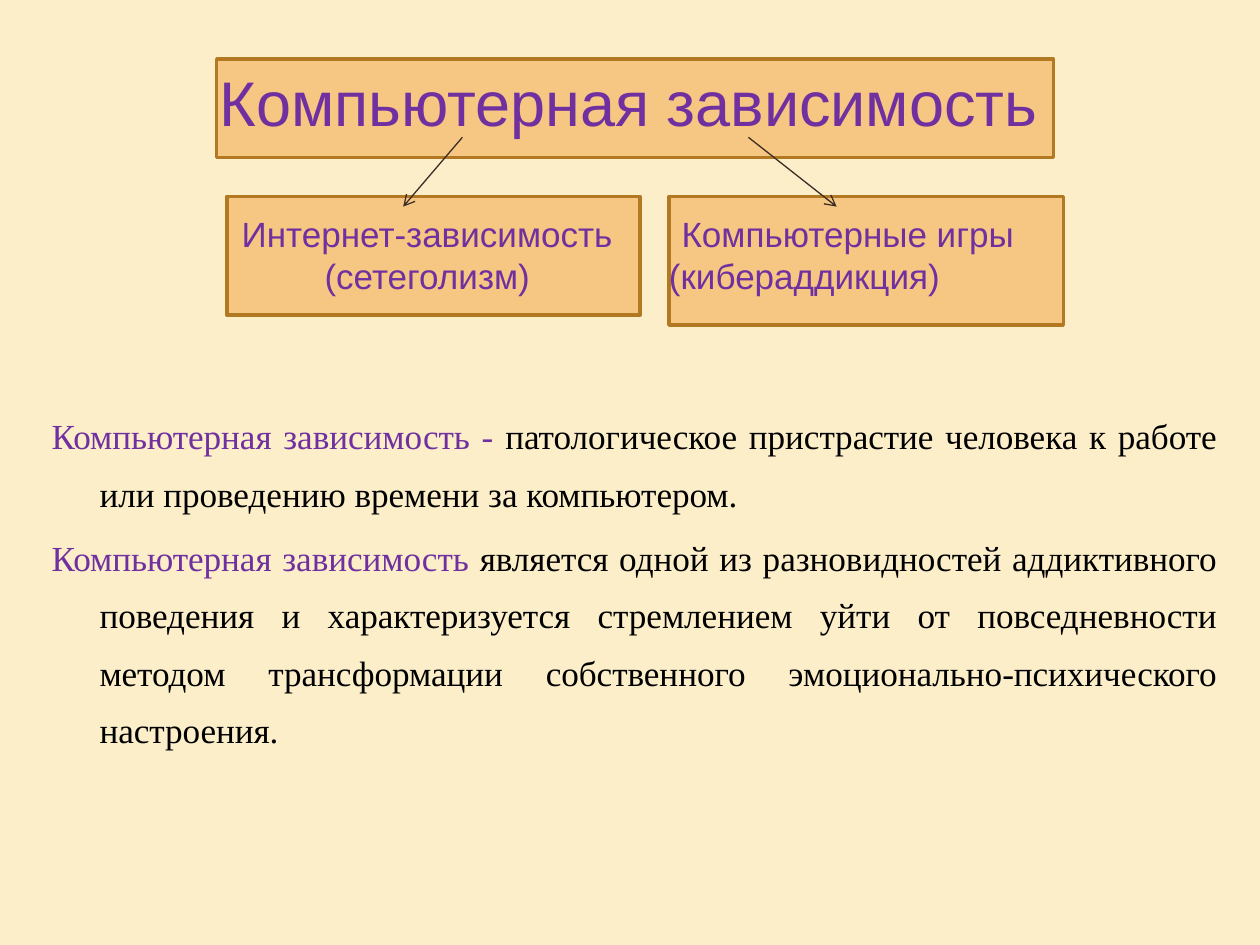
from lxml import etree
from pptx import Presentation
from pptx.dml.color import RGBColor
from pptx.enum.shapes import MSO_CONNECTOR, MSO_SHAPE
from pptx.enum.text import MSO_ANCHOR, MSO_AUTO_SIZE, PP_ALIGN
from pptx.oxml.ns import qn
from pptx.util import Inches, Pt

RECT = MSO_SHAPE.RECTANGLE
LINE = MSO_CONNECTOR.STRAIGHT
TOP, MIDDLE = MSO_ANCHOR.TOP, MSO_ANCHOR.MIDDLE
LEFT, CENTER, JUSTIFY = PP_ALIGN.LEFT, PP_ALIGN.CENTER, PP_ALIGN.JUSTIFY
FIXED = MSO_AUTO_SIZE.NONE

COLORS = {
    "page": "FBEEC9",
    "box": "F6C782",
    "edge": "B27822",
    "head": "7030A0",
    "text": "000000",
    "arrow": "3B2C24",
}
HEAD_FONT, BODY_FONT = "Arial", "Times New Roman"


class Deck:
    """Holds the style and the current slide, and draws each kind of element."""

    def __init__(self):
        self.prs = Presentation()
        self.prs.slide_width, self.prs.slide_height = Inches(10), Inches(7.5)
        self.slide = self.prs.slides.add_slide(self.prs.slide_layouts[1])
        self.paint(self.slide.background.fill, "page")

    def paint(self, fill, color):
        fill.solid()
        fill.fore_color.rgb = RGBColor.from_string(COLORS[color])

    def style(self, run, size, color, font):
        run.font.size, run.font.name = Pt(size), font
        run.font.color.rgb = RGBColor.from_string(COLORS[color])

    def place(self, shape, spot):
        shape.left, shape.top, shape.width, shape.height = map(Inches, spot)

    def panel(self, shape, text, size, pads, anchor, align, indent=0):
        self.paint(shape.fill, "box")
        self.paint(shape.line.fill, "edge")
        shape.line.width = Pt(2)
        frame = shape.text_frame
        frame.text = text
        frame.word_wrap, frame.auto_size = True, FIXED
        frame.vertical_anchor = anchor
        (frame.margin_left, frame.margin_top,
         frame.margin_right, frame.margin_bottom) = map(Inches, pads)
        para = frame.paragraphs[0]
        para.alignment = align
        para._p.get_or_add_pPr().set("indent", str(Inches(indent)))
        for run in para.runs:
            self.style(run, size, "head", HEAD_FONT)

    def title(self, text, spot):
        shape = self.slide.shapes.title
        self.place(shape, spot)
        self.panel(shape, text, 36, (0, 0, 0.1, 0.12), MIDDLE, CENTER)

    def box(self, text, spot, pads, align, indent=0):
        shape = self.slide.shapes.add_shape(RECT, *map(Inches, spot))
        shape.shadow.inherit = False
        self.panel(shape, text, 20, pads, TOP, align, indent)

    def body(self, items, spot):
        shape = self.slide.placeholders[1]
        self.place(shape, spot)
        frame = shape.text_frame
        frame.auto_size = FIXED
        frame.text = "\n".join(term for term, _ in items)
        for para, (_, rest) in zip(frame.paragraphs, items):
            para.alignment, para.line_spacing = JUSTIFY, 1.36
            para.space_before = Pt(4)
            props = para._p.get_or_add_pPr()
            props.set("marL", str(Inches(0.38)))
            props.set("indent", str(Inches(-0.38)))
            etree.SubElement(props, qn("a:buNone"))
            para.add_run().text = rest
            for run, color in zip(para.runs, ("head", "text")):
                self.style(run, 20.1, color, BODY_FONT)

    def arrow(self, start, end):
        link = self.slide.shapes.add_connector(LINE, *map(Inches, start + end))
        self.paint(link.line.fill, "arrow")
        link.line.width = Pt(0.75)
        tail = etree.SubElement(link.line._get_or_add_ln(), qn("a:tailEnd"))
        tail.set("type", "arrow")
        etree.SubElement(link._element.spPr, qn("a:effectLst"))

    def save(self):
        self.prs.save("out.pptx")


def main():
    deck = Deck()
    deck.title("Компьютерная зависимость", (1.72, 0.47, 6.64, 0.78))
    deck.box("Интернет-зависимость\v(сетеголизм)", (1.8, 1.56, 3.28, 0.94),
             (0, 0.13, 0.1, 0), CENTER)
    deck.box("Компьютерные игры\v(кибераддикция)", (5.31, 1.56, 3.13, 1.02),
             (0, 0.13, 0, 0), LEFT, 0.1)
    deck.body([
        ("Компьютерная зависимость - ",
         "патологическое пристрастие человека к работе или проведению "
         "времени за компьютером."),
        ("Компьютерная зависимость ",
         "является одной из разновидностей аддиктивного поведения и "
         "характеризуется стремлением уйти от повседневности методом "
         "трансформации собственного эмоционально-психического настроения."),
    ], (0.31, 3.12, 9.45, 4.06))
    for start, end in ((3.67, 3.2), (5.94, 6.64)):
        deck.arrow((start, 1.09), (end, 1.64))
    deck.save()


if __name__ == "__main__":
    main()
